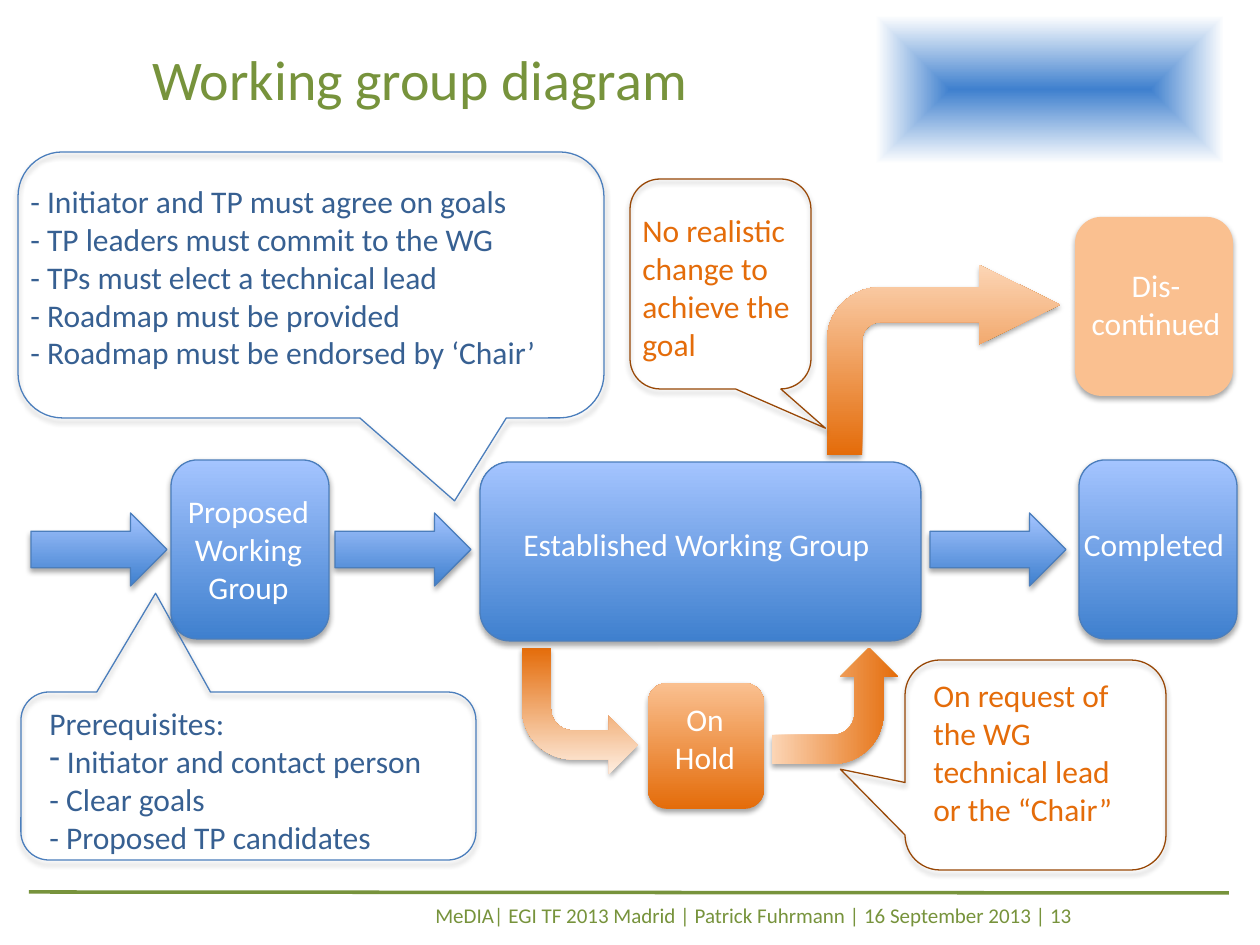
from lxml import etree
from pptx import Presentation
from pptx.dml.color import RGBColor
from pptx.enum.shapes import MSO_CONNECTOR as Connector, MSO_SHAPE as Shape
from pptx.enum.text import PP_ALIGN as Align
from pptx.oxml import parse_xml
from pptx.oxml.ns import nsdecls, qn
from pptx.util import Pt

SCALE = 914400 / 126
COLORS = {
    "white": "FFFFFF", "green": "77933C",
    "blue": "3F80CE", "sky": "A4C4FF", "blue line": "4B7EBC", "navy": "376092",
    "orange": "E46C0A", "apricot": "FAC090", "peach": "FCD5B5", "cream": "FDEADA",
    "brown": "984807",
}
BLUES = ("blue", "sky")
SHADOW = (
    f'<a:effectLst {nsdecls("a")}><a:outerShdw blurRad="39370" dist="22860" dir="5400000" '
    'rotWithShape="0"><a:srgbClr val="000000"><a:alpha val="35000"/></a:srgbClr>'
    '</a:outerShdw></a:effectLst>'
)
RECT_PATH = (
    f'<a:path {nsdecls("a")} path="rect">'
    '<a:fillToRect l="50000" t="50000" r="50000" b="50000"/></a:path>'
)


def px(*values):
    return [round(value * SCALE) for value in values]


def color(name):
    return RGBColor.from_string(COLORS[name])


class Diagram:
    """Holds the style and the slide being drawn."""

    font = "Calibri"
    size = 18

    def __init__(self, slide):
        self.slide = slide

    def text(self, box, lines, fill="white", size=None, align=None, wrap=True, bullets=()):
        """Write one paragraph per line; bullets lists the lines led by a dash bullet."""
        frame = self.slide.shapes.add_textbox(*px(*box)).text_frame
        frame.word_wrap = wrap
        for index, line in enumerate(lines):
            paragraph = frame.add_paragraph() if index else frame.paragraphs[0]
            if index in bullets:
                properties = paragraph._p.get_or_add_pPr()
                etree.SubElement(properties, qn("a:buFontTx"))
                etree.SubElement(properties, qn("a:buChar")).set("char", "-")
            paragraph.alignment = align
            run = paragraph.add_run()
            run.text = line
            run.font.name = self.font
            run.font.size = Pt(size or self.size)
            run.font.color.rgb = color(fill)

    def shape(self, kind, box, fill=None, line=None, adjust=(), shadow=True,
              flip=False, rotation=0, end=1):
        """Draw a preset shape; a pair of fill colours runs from bottom to top."""
        shape = self.slide.shapes.add_shape(kind, *px(*box))
        for index, value in enumerate(adjust):
            shape.adjustments[index] = value
        shape.rotation = rotation
        if flip:
            shape._element.spPr.xfrm.set("flipV", "1")
        if fill is None:
            shape.fill.background()
        elif isinstance(fill, str):
            shape.fill.solid()
            shape.fill.fore_color.rgb = color(fill)
        else:
            shape.fill.gradient()
            shape.fill.gradient_angle = 90
            for stop, name, position in zip(shape.fill.gradient_stops, fill, (0, end)):
                stop.color.rgb = color(name)
                stop.position = position
        if line:
            shape.line.color.rgb = color(line)
            shape.line.width = Pt(0.75)
        else:
            shape.line.fill.background()
        shape.shadow.inherit = False
        if shadow:
            effects = shape._element.spPr.find(qn("a:effectLst"))
            effects.getparent().replace(effects, parse_xml(SHADOW))
        return shape

    def glow(self, box):
        """Draw a rectangle that fades from its centre to its edges."""
        shape = self.shape(Shape.RECTANGLE, box, ("blue", "white"), shadow=False, end=0.83)
        linear = next(shape._element.spPr.iter(qn("a:lin")))
        linear.getparent().replace(linear, parse_xml(RECT_PATH))

    def state(self, box, fill, label_box, lines, line=None, wrap=True):
        self.shape(Shape.ROUNDED_RECTANGLE, box, fill, line)
        self.text(label_box, lines, align=Align.CENTER, wrap=wrap)

    def callout(self, box, tip, line, text_box, lines, fill, bullets=()):
        self.shape(Shape.ROUNDED_RECTANGULAR_CALLOUT, box, line=line, adjust=(*tip, 0.167))
        self.text(text_box, lines, fill, bullets=bullets)

    def rule(self, start, end, line, width):
        connector = self.slide.shapes.add_connector(Connector.STRAIGHT, *px(*start, *end))
        connector.line.color.rgb = color(line)
        connector.line.width = Pt(width)
        etree.SubElement(connector._element.spPr, qn("a:effectLst"))


def main():
    presentation = Presentation()
    presentation.slide_width, presentation.slide_height = px(1260, 945)
    diagram = Diagram(presentation.slides.add_slide(presentation.slide_layouts[6]))

    diagram.text((423, 896, 881, 38),
                 ["MeDIA| EGI TF 2013 Madrid | Patrick Fuhrmann | 16 September 2013 | 13"],
                 "green", size=12)
    diagram.rule((29, 892), (1229, 893), "green", 2)
    diagram.glow((840, 0, 420, 179))
    diagram.text((-147, 38, 1134, 158), ["Working group diagram"], "green",
                 size=32, align=Align.CENTER)

    for left in (31, 335, 930):
        diagram.shape(Shape.RIGHT_ARROW, (left, 513, 136, 73), BLUES, "blue line")

    diagram.state((1079, 460, 158, 179), BLUES, (1050, 519, 208, 50), ["Completed"],
                  "blue line")
    diagram.state((171, 460, 158, 179), BLUES, (168, 486, 161, 127),
                  ["Proposed", "Working", "Group"], "blue line", wrap=False)
    diagram.callout((21, 692, 455, 168), (-0.204, -1.088), "blue line", (37, 698, 451, 204),
                    ["Prerequisites:", " Initiator and contact person", "- Clear goals",
                     "- Proposed TP candidates"], "navy", bullets=(1,))

    diagram.state((480, 462, 441, 179), BLUES, (481, 519, 431, 50),
                  ["Established Working Group"], "blue line")
    diagram.callout((18, 152, 586, 266), (0.245, 0.812), "blue line", (18, 176, 604, 280),
                    ["- Initiator and TP must agree on goals",
                     "- TP leaders must commit to the WG",
                     "- TPs must elect a technical lead",
                     "- Roadmap must be provided",
                     "- Roadmap must be endorsed by ‘Chair’"], "navy")

    diagram.shape(Shape.BENT_ARROW, (827, 265, 233, 190), ("orange", "peach"),
                  adjust=(0.185, 0.209, 0.425, 0.281))
    diagram.state((1075, 217, 158, 179), "apricot", (1052, 260, 208, 89),
                  ["Dis-", "continued"])
    diagram.callout((630, 179, 181, 210), (0.58, 0.687), "brown", (630, 205, 193, 242),
                    ["No realistic change to achieve the goal"], "orange")

    diagram.shape(Shape.BENT_ARROW, (522, 648, 116, 126), ("orange", "cream"),
                  flip=True, end=0.97)
    diagram.shape(Shape.BENT_ARROW, (777, 643, 116, 126), ("peach", "orange"),
                  flip=True, rotation=270)
    diagram.state((648, 683, 116, 126), ("orange", "apricot"), (629, 694, 152, 89),
                  ["On", "Hold"])
    diagram.callout((905, 660, 261, 210), (-0.748, 0.02), "brown", (921, 670, 229, 242),
                    ["On request of the WG technical lead or the “Chair”"], "orange")

    presentation.save("out.pptx")


if __name__ == "__main__":
    main()
